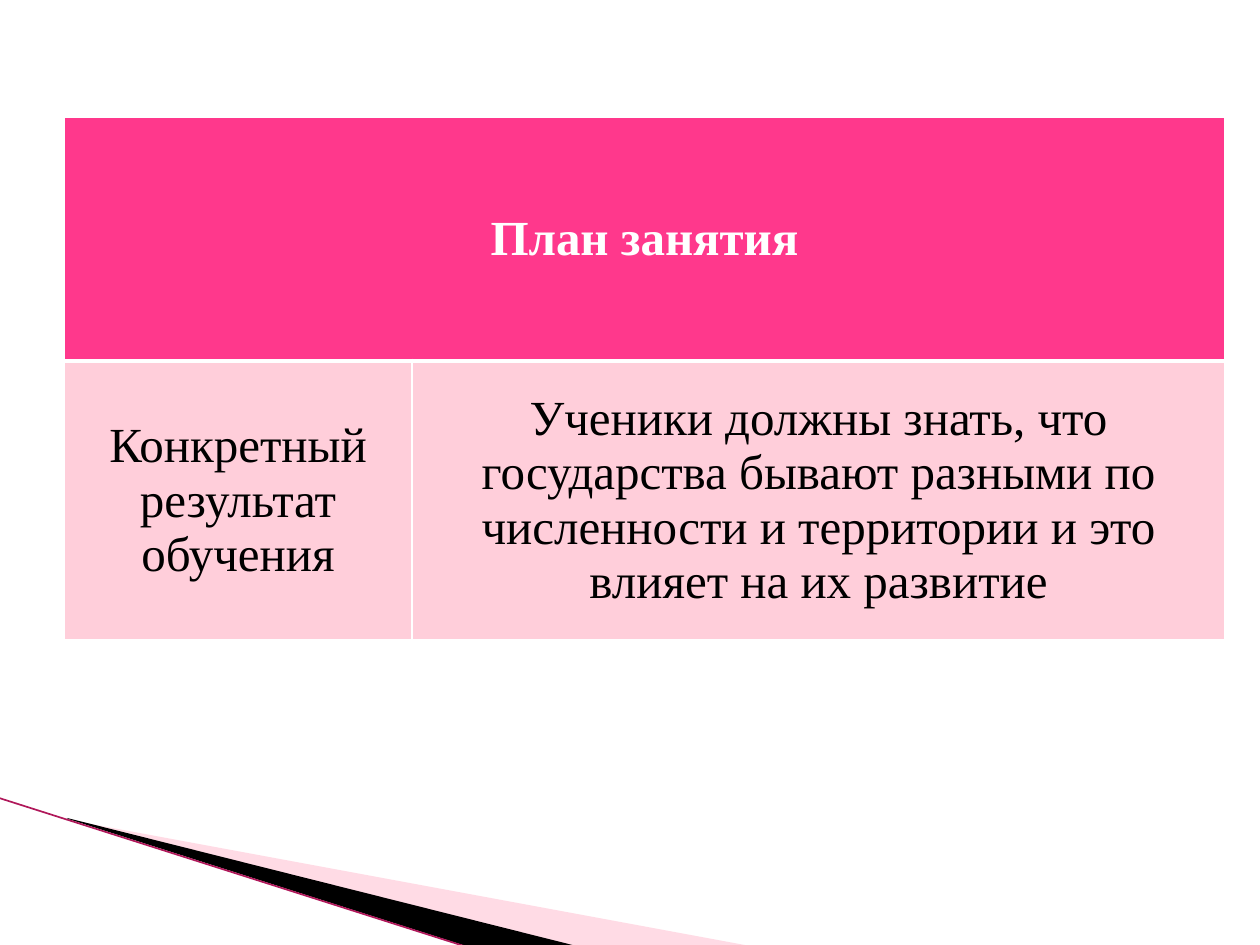
from lxml.etree import SubElement
from pptx import Presentation
from pptx.dml.color import RGBColor
from pptx.enum.shapes import MSO_CONNECTOR
from pptx.enum.text import MSO_ANCHOR, PP_ALIGN
from pptx.oxml import parse_xml
from pptx.oxml.ns import nsdecls, qn
from pptx.util import Emu, Pt

SCALE = 914400 / 126
FONT = "Times New Roman"
COLORS = {
    "white": "FFFFFF",
    "black": "000000",
    "header": "FF388C",
    "body": "FFCEDA",
    "wedge": "FFA5BF",
    "edge": "B0185A",
}


def px(n):
    return Emu(round(n * SCALE))


def rgb(name):
    return RGBColor.from_string(COLORS[name])


def add_wedge(s, points, color, alpha=None):
    fb = s.shapes.build_freeform(*points[0], scale=SCALE)
    fb.add_line_segments(points[1:], close=True)
    sp = fb.convert_to_shape()
    sp.shadow.inherit = False
    sp.fill.solid()
    sp.fill.fore_color.rgb = rgb(color)
    sp.line.fill.background()
    if alpha:
        clr = sp._element.spPr.find(qn("a:solidFill"))[0]
        SubElement(clr, qn("a:alpha")).set("val", str(alpha * 1000))


def add_edge(s, x1, y1, x2, y2):
    c = s.shapes.add_connector(MSO_CONNECTOR.STRAIGHT, px(x1), px(y1), px(x2), px(y2))
    c.line.color.rgb = rgb("edge")
    c.line.width = Pt(0.95)
    SubElement(c._element.spPr, qn("a:effectLst"))


def set_borders(cell, bottom):
    tcPr = cell._tc.get_or_add_tcPr()
    widths = {"lnL": 1, "lnR": 1, "lnT": 1, "lnB": bottom}
    for i, (tag, width) in enumerate(widths.items()):
        tcPr.insert(i, parse_xml(
            f'<a:{tag} {nsdecls("a")} w="{Pt(width)}"><a:solidFill>'
            f'<a:srgbClr val="{COLORS["white"]}"/></a:solidFill></a:{tag}>'))


def style_cell(cell, fill, bottom=1):
    cell.fill.solid()
    cell.fill.fore_color.rgb = rgb(fill)
    cell.vertical_anchor = MSO_ANCHOR.MIDDLE
    set_borders(cell, bottom)


def write_cell(cell, text, color, bold=False):
    p = cell.text_frame.paragraphs[0]
    p.alignment = PP_ALIGN.CENTER
    r = p.add_run()
    r.text = text
    r.font.name = FONT
    r.font.size = Pt(28)
    r.font.bold = bold
    r.font.color.rgb = rgb(color)


def add_plan_table(s, x, y, cols, rows, title, texts):
    frame = s.shapes.add_table(
        len(rows), len(cols), px(x), px(y), px(sum(cols)), px(sum(rows)))
    table = frame.table
    for col, w in zip(table.columns, cols):
        col.width = px(w)
    for row, h in zip(table.rows, rows):
        row.height = px(h)
    for i in range(len(cols)):
        style_cell(table.cell(0, i), "header", bottom=3)
        style_cell(table.cell(1, i), "body")
        write_cell(table.cell(1, i), texts[i], "black")
    table.cell(0, 0).merge(table.cell(0, len(cols) - 1))
    write_cell(table.cell(0, 0), title, "white", bold=True)


def main():
    prs = Presentation()
    prs.slide_width, prs.slide_height = px(1260), px(945)
    s = prs.slides.add_slide(prs.slide_layouts[6])
    add_wedge(s, [(69, 820), (750, 946), (575, 946), (69, 819)], "wedge", alpha=40)
    add_wedge(s, [(67, 818), (576, 946), (469, 947), (68, 819)], "black")
    add_edge(s, -1, 798, 467, 947)
    add_plan_table(
        s, 64, 117, [348, 813], [244, 279], "План занятия",
        ["Конкретный результат обучения",
         "Ученики должны знать, что государства бывают разными по "
         "численности и территории и это влияет на их развитие"])
    prs.save("out.pptx")


if __name__ == "__main__":
    main()
